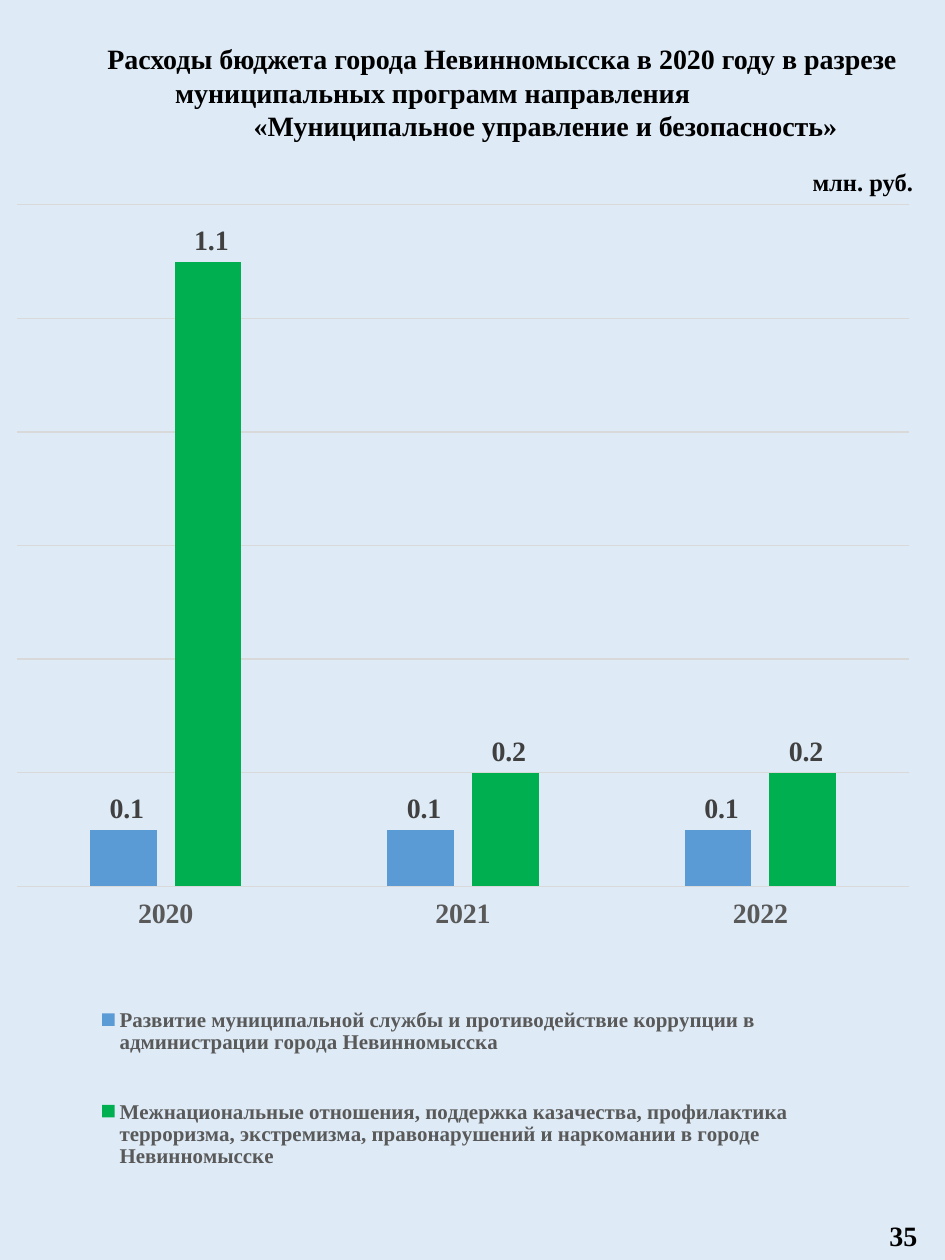
from lxml.etree import SubElement
from pptx import Presentation
from pptx.chart.data import CategoryChartData as ChartData
from pptx.dml.color import RGBColor
from pptx.enum.chart import XL_CHART_TYPE as Kind
from pptx.enum.chart import XL_LABEL_POSITION as LabelPos
from pptx.enum.chart import XL_LEGEND_POSITION as LegendPos
from pptx.enum.chart import XL_TICK_LABEL_POSITION as TickPos
from pptx.enum.chart import XL_TICK_MARK as Tick
from pptx.enum.text import MSO_ANCHOR as Anchor
from pptx.enum.text import MSO_AUTO_SIZE as Fit
from pptx.enum.text import PP_ALIGN as Align
from pptx.oxml.ns import qn
from pptx.util import Inches, Pt

YEARS = ["2020", "2021", "2022"]
SERIES = [
    ("Развитие муниципальной службы и противодействие коррупции в "
     "администрации города Невинномысска", [0.1, 0.1, 0.1], "5B9BD5"),
    ("Межнациональные отношения, поддержка казачества, профилактика "
     "терроризма, экстремизма, правонарушений и наркомании в городе "
     "Невинномысске", [1.1, 0.2, 0.2], "00B050"),
]
TITLE = [
    "Расходы бюджета города Невинномысска в 2020 году в разрезе",
    "муниципальных программ направления",
    "«Муниципальное управление и безопасность»",
]


def rgb(code):
    return RGBColor.from_string(code)


def place(shape, box):
    names = ("left", "top", "width", "height")
    for name, size in zip(names, box):
        setattr(shape, name, Inches(size))


def pin(parent, index, box, inner=False):
    """Give a chart part a fixed layout, in fractions of the chart."""
    for old in parent.findall(qn("c:layout")):
        parent.remove(old)
    layout = SubElement(parent, qn("c:layout"))
    parent.insert(index, layout)
    manual = SubElement(layout, qn("c:manualLayout"))
    values = {"layoutTarget": "inner"} if inner else {}
    values |= {"xMode": "edge", "yMode": "edge"}
    values |= dict(zip("xywh", map(str, box)))
    for name, value in values.items():
        SubElement(manual, qn("c:" + name)).set("val", value)


class Page:
    face = "Times New Roman"
    grid = "D9D9D9"
    number = "#\\ ##0.0"

    def __init__(self, deck, back):
        self.slide = deck.slides.add_slide(deck.slide_layouts[5])
        fill = self.slide.background.fill
        fill.solid()
        fill.fore_color.rgb = rgb(back)

    def style(self, font, size, color="000000", bold=True, face=None):
        values = {"name": face or self.face, "size": Pt(size), "bold": bold}
        for name, value in values.items():
            setattr(font, name, value)
        font.color.rgb = rgb(color)

    def line(self, line):
        line.color.rgb = rgb(self.grid)
        line.width = Pt(0.75)

    def title(self, lines, box, size):
        shape = self.slide.shapes.title
        place(shape, box)
        frame = shape.text_frame
        frame.auto_size = Fit.NONE
        frame.vertical_anchor = Anchor.TOP
        frame.text = "\n".join(lines)
        for para in frame.paragraphs:
            para.alignment = Align.CENTER
            self.style(para.runs[0].font, size)
        # The middle line stands left of the centre.
        middle = frame.paragraphs[1]
        middle.alignment = Align.LEFT
        props = middle._p.get_or_add_pPr()
        props.set("marL", str(Inches(0.69)))
        props.set("indent", "0")

    def text(self, words, box, size):
        shape = self.slide.shapes.add_textbox(*map(Inches, box))
        frame = shape.text_frame
        frame.word_wrap = True
        frame.text = words
        self.style(frame.paragraphs[0].runs[0].font, size)

    def chart(self, box):
        data = ChartData(number_format=self.number)
        data.categories = YEARS
        for name, values, _ in SERIES:
            data.add_series(name, values)
        chart = self.slide.shapes.add_chart(
            Kind.COLUMN_CLUSTERED, *map(Inches, box), data).chart
        chart.has_title = False
        self.style(chart.font, 10, bold=False, face="Calibri")
        self.axes(chart)
        self.bars(chart.plots[0])
        self.legend(chart)
        area = chart._chartSpace.chart.plotArea
        pin(area, 0, (0, 0, 1, 0.675), inner=True)

    def axes(self, chart):
        years, values = chart.category_axis, chart.value_axis
        years.major_tick_mark = Tick.NONE
        years.tick_label_position = TickPos.LOW
        self.style(years.tick_labels.font, 16, "595959")
        self.line(years.format.line)
        scale = {"minimum_scale": 0, "maximum_scale": 1.2,
                 "major_unit": 0.2, "visible": False,
                 "has_major_gridlines": True}
        for name, value in scale.items():
            setattr(values, name, value)
        self.line(values.major_gridlines.format.line)

    def bars(self, plot):
        plot.gap_width = 219
        plot.overlap = -27
        plot.vary_by_categories = False
        for series, (_, _, color) in zip(plot.series, SERIES):
            series.format.fill.solid()
            series.format.fill.fore_color.rgb = rgb(color)
            labels = series.data_labels
            labels.show_value = True
            labels.position = LabelPos.OUTSIDE_END
            labels.number_format = self.number
            labels.number_format_is_linked = False
            self.style(labels.font, 16, "404040")

    def legend(self, chart):
        chart.has_legend = True
        legend = chart.legend
        legend.position = LegendPos.BOTTOM
        legend.include_in_layout = False
        self.style(legend.font, 12, "595959")
        pin(legend._element, 1, (0.08, 0.75, 0.8, 0.25))


def main():
    deck = Presentation()
    deck.slide_width, deck.slide_height = Inches(7.5), Inches(10)
    page = Page(deck, "DEEBF7")
    page.title(TITLE, (0.6, 0.28, 6.77, 0.91), 16)
    page.chart((0.13, 1.62, 7.09, 8.02))
    page.text("млн. руб.", (6.35, 1.28, 1.02, 0.34), 14)
    page.text("35", (6.96, 9.62, 0.51, 0.37), 16)
    deck.save("out.pptx")


if __name__ == "__main__":
    main()
